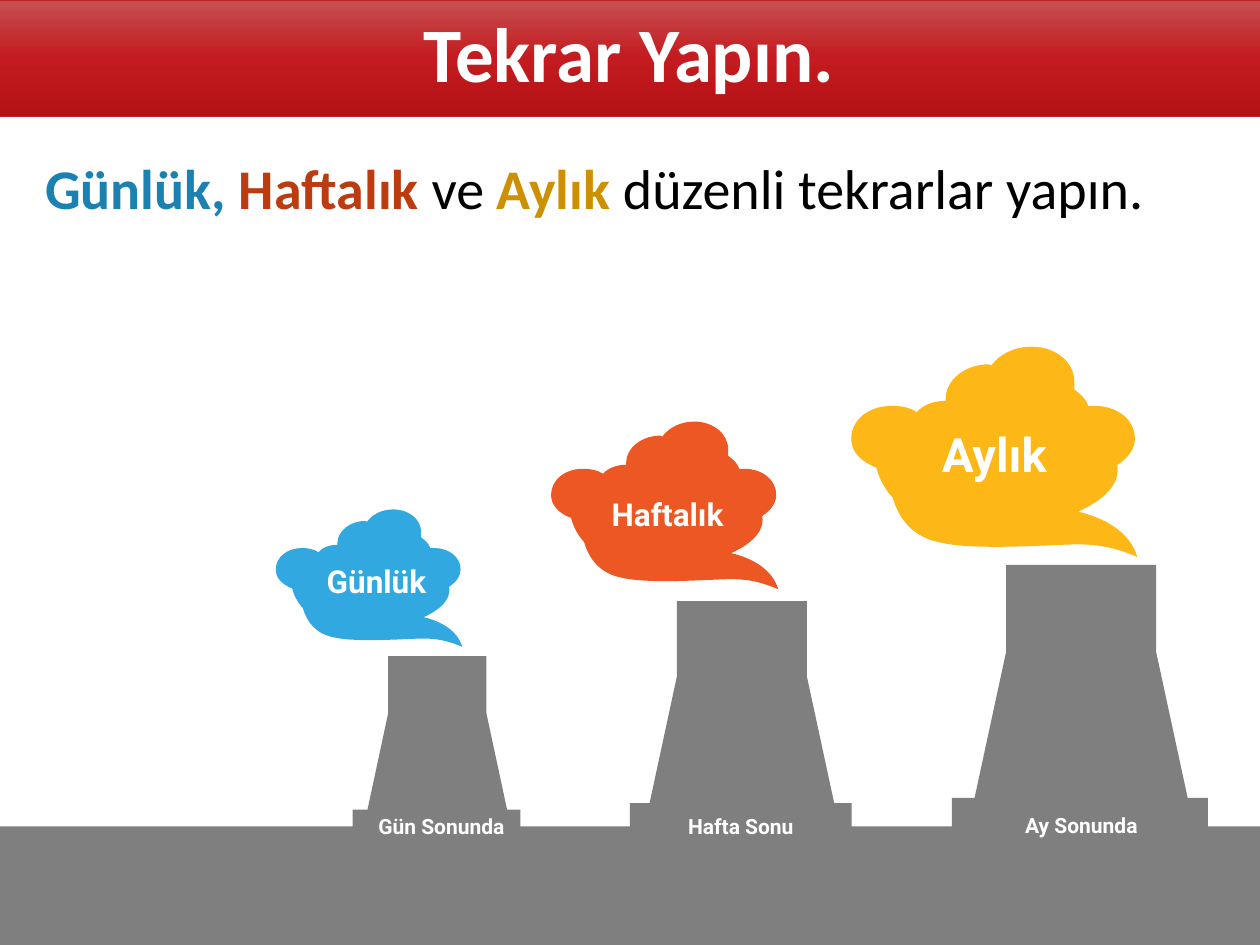
from copy import deepcopy

from pptx import Presentation
from pptx.dml.color import RGBColor
from pptx.enum.shapes import MSO_SHAPE
from pptx.enum.text import MSO_ANCHOR, MSO_AUTO_SIZE, PP_ALIGN
from pptx.oxml.ns import qn
from pptx.oxml.xmlchemy import OxmlElement
from pptx.util import Cm, Pt

RECTANGLE = MSO_SHAPE.RECTANGLE
CENTER = PP_ALIGN.CENTER
MIDDLE = MSO_ANCHOR.MIDDLE
FIT_SHAPE = MSO_AUTO_SIZE.SHAPE_TO_FIT_TEXT

WHITE = RGBColor(0xFF, 0xFF, 0xFF)
BLACK = RGBColor(0x00, 0x00, 0x00)
GREY = RGBColor(0x7F, 0x7F, 0x7F)
BLUE = RGBColor(0x31, 0xA8, 0xDF)
ORANGE = RGBColor(0xEC, 0x57, 0x24)
YELLOW = RGBColor(0xFD, 0xB8, 0x17)
DARK_BLUE = RGBColor(0x1B, 0x81, 0xB1)
DARK_ORANGE = RGBColor(0xBC, 0x3C, 0x10)
DARK_YELLOW = RGBColor(0xCD, 0x90, 0x02)
TITLE_EDGE = RGBColor(0xBB, 0x23, 0x26)
TITLE_STOPS = (
    (0, RGBColor(0xC6, 0x50, 0x51)),
    (0.5, RGBColor(0xC3, 0x1B, 0x1F)),
    (1, RGBColor(0xB4, 0x12, 0x15)),
)

TOWER_SIZE = (203, 210)
TOWER_OUTLINE = [
    (203, 185), (187, 185), (162, 69), (162, 0), (43, 0),
    (43, 69), (18, 185), (0, 185), (0, 210), (203, 210),
]

CLOUD_SIZE = (227, 167)
CLOUD_CURVES = [
    ((184, 129), (215, 116), (211, 94)),
    ((220, 88), (225, 81), (225, 73)),
    ((225, 58), (211, 47), (193, 47)),
    ((191, 47), (190, 47), (188, 47)),
    ((186, 41), (182, 38), (177, 34)),
    ((177, 32), (177, 30), (177, 28)),
    ((177, 12), (162, 0), (143, 0)),
    ((129, 0), (118, 6), (111, 15)),
    ((111, 15), (109, 14), (109, 14)),
    ((91, 14), (75, 26), (75, 41)),
    ((75, 41), (75, 41), (75, 43)),
    ((66, 43), (57, 46), (52, 52)),
    ((46, 48), (39, 47), (32, 47)),
    ((14, 47), (0, 58), (0, 73)),
    ((0, 83), (7, 91), (20, 96)),
    ((21, 99), (23, 109), (33, 120)),
    ((38, 137), (49, 152), (73, 156)),
    ((92, 160), (127, 159), (151, 158)),
    ((180, 157), (197, 154), (227, 167)),
    ((221, 147), (201, 136), (180, 131)),
]


def paint(shape, color):
    """Give a shape a flat fill without line or shadow."""
    shape.shadow.inherit = False
    shape.fill.solid()
    shape.fill.fore_color.rgb = color
    shape.line.fill.background()


def add_outline(slide, box, size, points, color):
    """Stretch an outline drawn on a grid of the given size over a box."""
    left, top, width, height = box
    scaled = [
        (Cm(left + x * width / size[0]), Cm(top + y * height / size[1]))
        for x, y in points
    ]
    builder = slide.shapes.build_freeform(*scaled[0])
    builder.add_line_segments(scaled[1:], close=True)
    outline = builder.convert_to_shape()
    paint(outline, color)
    return outline


def bend_segments(outline, box, size, curves):
    """Turn the straight segments of an outline into Bézier curves."""
    segments = list(outline._element.iter(qn("a:lnTo")))
    for segment, curve in zip(segments, curves):
        bend = OxmlElement("a:cubicBezTo")
        for x, y in curve:
            point = OxmlElement("a:pt")
            point.set("x", str(Cm(x * box[2] / size[0])))
            point.set("y", str(Cm(y * box[3] / size[1])))
            bend.append(point)
        segment.getparent().replace(segment, bend)


def add_label(slide, center, width, text, points):
    """Write a bold white label around a centre point."""
    x, y = center
    height = 0.25 + 0.043 * points
    label = slide.shapes.add_textbox(
        Cm(x - width / 2), Cm(y - height / 2), Cm(width), Cm(height))
    label.text_frame.word_wrap = False
    label.text_frame.auto_size = FIT_SHAPE
    paragraph = label.text_frame.paragraphs[0]
    paragraph.text = text
    paragraph.alignment = CENTER
    font = paragraph.font
    font.name, font.size, font.bold = "Roboto", Pt(points), True
    font.color.rgb = WHITE


def add_title(slide, box, text):
    """Turn the title placeholder into a red gradient banner."""
    title = slide.shapes.title
    title.left, title.top, title.width, title.height = map(Cm, box)
    title.fill.gradient()
    title.fill.gradient_angle = 270
    stop_list = title.fill.gradient_stops[0]._gs.getparent()
    stop_list.append(deepcopy(stop_list[-1]))
    for stop, (position, color) in zip(title.fill.gradient_stops, TITLE_STOPS):
        stop.position = position
        stop.color.rgb = color
    title.line.color.rgb = TITLE_EDGE
    title.line.width = Pt(0.5)
    title.text_frame.vertical_anchor = MIDDLE
    paragraph = title.text_frame.paragraphs[0]
    paragraph.text = text
    paragraph.alignment = CENTER
    paragraph.line_spacing = 0.9
    font = paragraph.font
    font.name, font.size, font.bold = "Calibri", Pt(44), True
    font.color.rgb = WHITE


def add_advice(slide, box, parts):
    """Write the advice line from (text, colour, bold) parts."""
    advice = slide.shapes.add_textbox(*map(Cm, box))
    advice.text_frame.word_wrap = True
    paragraph = advice.text_frame.paragraphs[0]
    paragraph.font.name, paragraph.font.size = "Calibri", Pt(32)
    for text, color, bold in parts:
        run = paragraph.add_run()
        run.text = text
        run.font.bold = bold
        run.font.color.rgb = color


def add_ground(slide, box):
    """Draw the grey ground band."""
    paint(slide.shapes.add_shape(RECTANGLE, *map(Cm, box)), GREY)


def add_tower(slide, box, text, width, shift):
    """Draw a cooling tower with its label across the base."""
    add_outline(slide, box, TOWER_SIZE, TOWER_OUTLINE, GREY)
    center = (box[0] + box[2] / 2 + shift, box[1] + box[3] - 0.09)
    add_label(slide, center, width, text, 12)


def add_cloud(slide, box, color, text, points, width, shift):
    """Draw a smoke cloud with its label just off the middle."""
    ends = [curve[-1] for curve in CLOUD_CURVES]
    cloud = add_outline(slide, box, CLOUD_SIZE, [ends[-1], *ends], color)
    bend_segments(cloud, box, CLOUD_SIZE, CLOUD_CURVES)
    center = (box[0] + box[2] / 2 + shift[0], box[1] + box[3] / 2 + shift[1])
    add_label(slide, center, width, text, points)


def main():
    """Build the slide and save it."""
    presentation = Presentation()
    presentation.slide_width, presentation.slide_height = Cm(25.4), Cm(19.05)
    slide = presentation.slides.add_slide(presentation.slide_layouts[5])

    add_ground(slide, (0, 16.66, 25.4, 2.39))
    towers = (
        ((7.11, 13.23, 3.38, 3.51), "Gün Sonunda", 3.18, 0.1),
        ((12.7, 12.12, 4.47, 4.62), "Hafta Sonu", 2.79, 0),
        ((19.19, 11.39, 5.16, 5.33), "Ay Sonunda", 2.92, 0.03),
    )
    for tower in towers:
        add_tower(slide, *tower)

    clouds = (
        ((5.56, 10.27, 3.76, 2.77), BLUE, "Günlük", 18, 2.67, (0.15, 0.07)),
        ((11.11, 8.5, 4.58, 3.38), ORANGE, "Haftalık", 18, 3.02, (0.06, 0.17)),
        ((17.16, 6.99, 5.77, 4.24), YELLOW, "Aylık", 27, 2.87, (0, 0.05)),
    )
    for cloud in clouds:
        add_cloud(slide, *cloud)

    add_title(slide, (-0.03, 0, 25.43, 2.34), "Tekrar Yapın.")
    add_advice(slide, (0.66, 2.97, 23.77, 3), (
        ("Günlük, ", DARK_BLUE, True),
        ("Haftalık", DARK_ORANGE, True),
        (" ve ", BLACK, False),
        ("Aylık", DARK_YELLOW, True),
        (" düzenli tekrarlar yapın.", BLACK, False),
    ))

    presentation.save("out.pptx")


if __name__ == "__main__":
    main()
